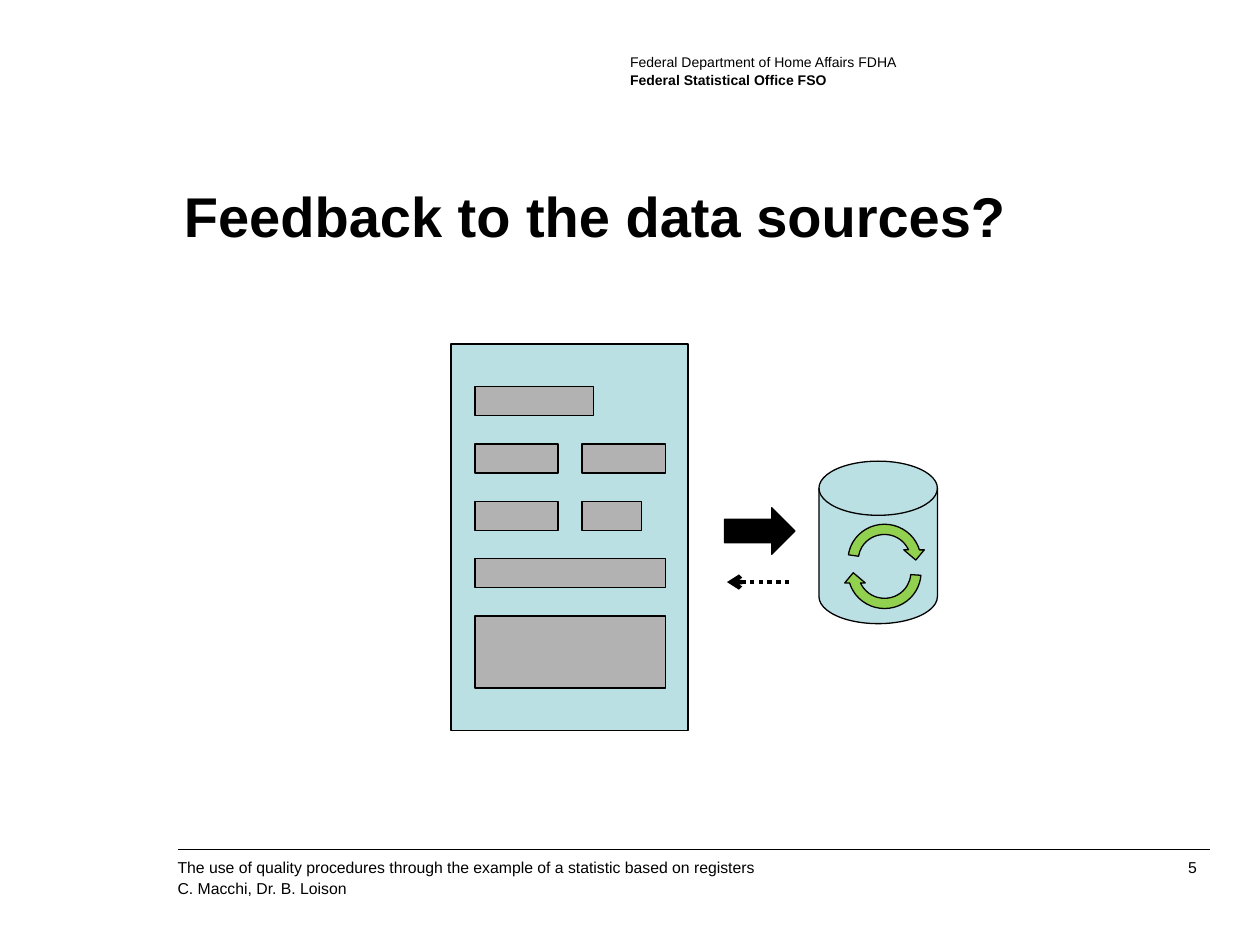
from pptx import Presentation
from pptx.dml.color import RGBColor
from pptx.enum.dml import MSO_LINE
from pptx.enum.shapes import MSO_CONNECTOR, MSO_SHAPE
from pptx.enum.text import MSO_ANCHOR, PP_ALIGN
from pptx.oxml.ns import qn
from pptx.util import Inches, Pt
from lxml import etree

RECTANGLE = MSO_SHAPE.RECTANGLE
DISK = MSO_SHAPE.FLOWCHART_MAGNETIC_DISK
CIRCULAR_ARROW = MSO_SHAPE.CIRCULAR_ARROW
RIGHT_ARROW = MSO_SHAPE.RIGHT_ARROW
STRAIGHT = MSO_CONNECTOR.STRAIGHT
DOTTED = MSO_LINE.ROUND_DOT
TOP = MSO_ANCHOR.TOP
LEFT, RIGHT = PP_ALIGN.LEFT, PP_ALIGN.RIGHT

FONT = "Arial"
COLORS = {
    "black": "000000",
    "pale_blue": "BBE0E3",
    "gray": "B2B2B2",
    "green": "92D050",
}


def color(name):
    return RGBColor.from_string(COLORS[name])


def write_text(shape, lines, size, bold_lines=(), spacing=None, align=LEFT):
    frame = shape.text_frame
    frame.word_wrap = True
    frame.vertical_anchor = TOP
    frame.margin_left = frame.margin_right = 0
    frame.margin_top = frame.margin_bottom = 0
    paragraph = frame.paragraphs[0]
    paragraph.alignment = align
    paragraph.line_spacing = spacing
    for index, line in enumerate(lines):
        if index:
            paragraph.add_line_break()
        run = paragraph.add_run()
        run.text = line
        run.font.name = FONT
        run.font.size = Pt(size)
        run.font.bold = index in bold_lines
        run.font.color.rgb = color("black")


def add_text(slide, box, lines, size, **text_format):
    shape = slide.shapes.add_textbox(*map(Inches, box))
    write_text(shape, lines, size, **text_format)


def add_block(slide, kind, box, fill):
    shape = slide.shapes.add_shape(kind, *map(Inches, box))
    shape.shadow.inherit = False
    shape.fill.solid()
    shape.fill.fore_color.rgb = color(fill)
    shape.line.color.rgb = color("black")
    shape.line.width = Pt(0.75)
    return shape


def add_line(slide, start, end, width, dash=None, head=None):
    connector = slide.shapes.add_connector(STRAIGHT, *map(Inches, start + end))
    connector.line.color.rgb = color("black")
    connector.line.width = Pt(width)
    if dash:
        connector.line.dash_style = dash
    properties = connector._element.spPr
    if head:
        outline = properties.find(qn("a:ln"))
        etree.SubElement(outline, qn("a:headEnd"), type=head)
    etree.SubElement(properties, qn("a:effectLst"))


def add_header(slide, box):
    lines = ["Federal Department of Home Affairs FDHA", "Federal Statistical Office FSO"]
    add_text(slide, box, lines, 8, bold_lines=(1,), spacing=1.05)


def add_title(slide, box):
    title = slide.shapes.title
    title.left, title.top, title.width, title.height = map(Inches, box)
    write_text(title, ["Feedback to the data sources?"], 32, bold_lines=(0,), spacing=Pt(36))


def add_footer(slide, box):
    left, top, width, height = box
    number_width = 0.5
    text_top = top + 0.05
    add_line(slide, (left, top), (left + width, top), 0.75)
    lines = [
        "The use of quality procedures through the example of a statistic based on registers",
        "C. Macchi, Dr. B. Loison",
    ]
    add_text(slide, (left, text_top, 7.77, height), lines, 9, spacing=Pt(12))
    number_left = left + width - 0.1 - number_width
    add_text(slide, (number_left, text_top, number_width, 0.17), ["5"], 9,
             spacing=Pt(12), align=RIGHT)


def add_form(slide, box):
    left, top, width, height = box
    add_block(slide, RECTANGLE, box, "pale_blue")
    margin, first_row, row_pitch, column_pitch = 0.19, 0.34, 0.455, 0.85
    field_height, full_width = 0.23, 1.51
    rows = [
        ([0.94], field_height),
        ([0.66, 0.66], field_height),
        ([0.66, 0.47], field_height),
        ([full_width], field_height),
        ([full_width], 0.57),
    ]
    for row, (field_widths, row_height) in enumerate(rows):
        for column, field_width in enumerate(field_widths):
            field = (left + margin + column * column_pitch,
                     top + first_row + row * row_pitch, field_width, row_height)
            add_block(slide, RECTANGLE, field, "gray")


def add_exchange(slide, box):
    left, top, width, height = box
    add_block(slide, RIGHT_ARROW, (left, top, width, 0.37), "black")
    bottom = top + height
    add_line(slide, (left + 0.02, bottom), (left + width - 0.02, bottom), 2.5,
             dash=DOTTED, head="arrow")


def add_database(slide, box):
    left, top, width, height = box
    add_block(slide, DISK, box, "pale_blue")
    for offset, rotation, start_angle in [(0.46, 0, 112.997), (0.56, 180, 110.438)]:
        arrow = add_block(slide, CIRCULAR_ARROW, (left + 0.19, top + offset, 0.66, 0.65), "green")
        arrow.rotation = rotation
        values = [0.125, 11.423, 204.577, start_angle, 0.125]
        for index, value in enumerate(values):
            arrow.adjustments[index] = value


def main():
    presentation = Presentation()
    presentation.slide_width = Inches(10)
    presentation.slide_height = Inches(7.5)
    slide = presentation.slides.add_slide(presentation.slide_layouts[5])
    add_footer(slide, (1.41, 6.74, 8.19, 0.33))
    add_header(slide, (5, 0.42, 3.92, 0.28))
    add_title(slide, (1.46, 1.47, 8.16, 0.95))
    add_form(slide, (3.58, 2.73, 1.88, 3.07))
    add_database(slide, (6.5, 3.66, 0.94, 1.29))
    add_exchange(slide, (5.75, 4.03, 0.56, 0.59))
    presentation.save("out.pptx")


if __name__ == "__main__":
    main()
